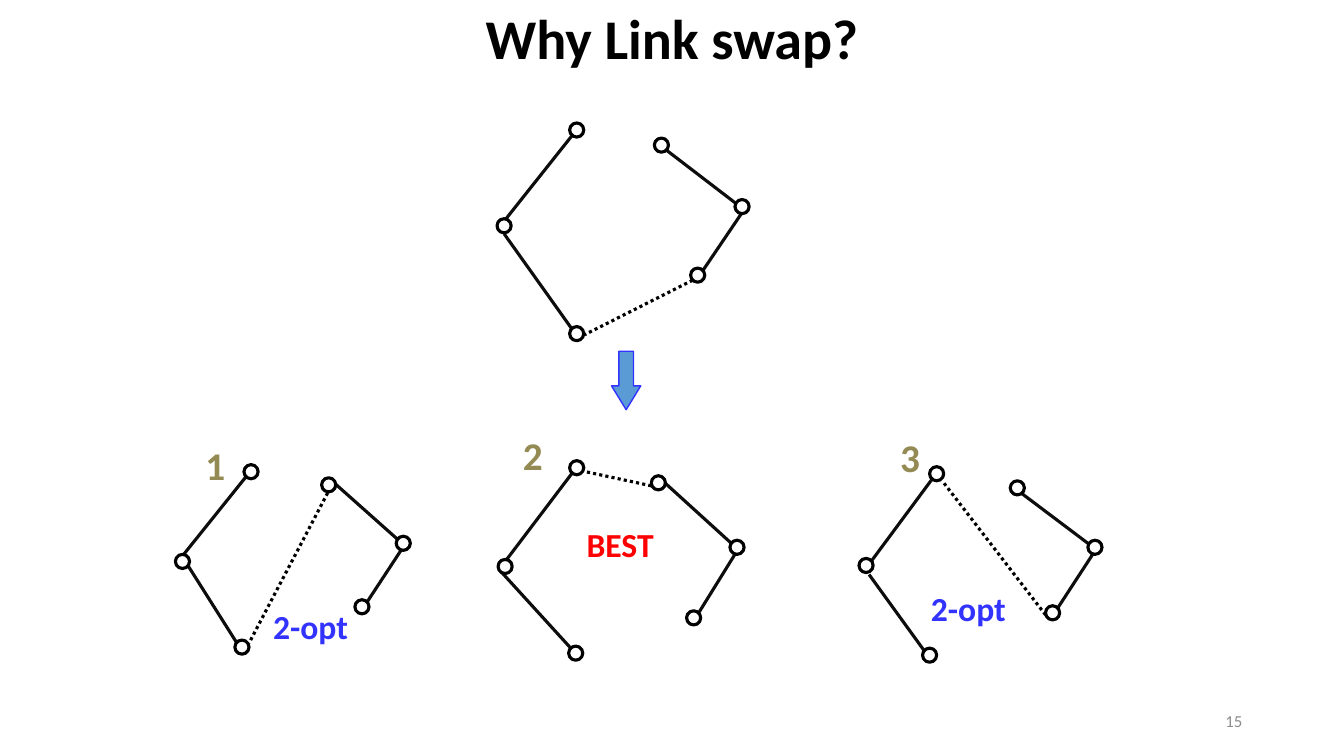
from lxml import etree
from pptx import Presentation
from pptx import util as u
from pptx.dml.color import RGBColor
from pptx.enum import dml, shapes, text
from pptx.oxml.ns import qn

PX = 9144  # EMU in one px, 100 px to the inch
NODE = 14
FONT = "Calibri"
OLIVE, BLUE, RED = "948A54", "3333FF", "FF0000"
BLACK, INK, WHITE = "000000", "0D0D0D", "FFFFFF"

# Each tour: nodes (left, top), solid links and one dotted link (x1, y1, x2, y2),
# labels (words, box, size, colour, line spacing in points)
TOURS = [
    dict(
        nodes=[(242, 461), (174, 550), (233, 635), (319, 474), (393, 532), (352, 595)],
        links=[(244, 473, 175, 559), (235, 638, 187, 562),
               (401, 541, 328, 476), (401, 541, 359, 605)],
        dots=(325, 489, 247, 638),
        labels=[("1", (190, 433, 47, 62), 28, OLIVE, None),
                ("2-opt", (233, 596, 150, 62), 24, BLUE, None)]),
    dict(
        nodes=[(922, 463), (852, 554), (915, 643), (1002, 477), (1079, 536), (1037, 601)],
        links=[(924, 476, 864, 557), (917, 646, 862, 570),
               (1087, 545, 1014, 490), (1087, 545, 1044, 611)],
        dots=(1037, 610, 936, 479),
        labels=[("3", (868, 437, 69, 55), 28, OLIVE, 25.2),
                ("2-opt", (889, 578, 143, 62), 24, BLUE, None)]),
    dict(
        nodes=[(565, 457), (494, 555), (564, 641), (646, 472), (724, 536), (681, 606)],
        links=[(567, 470, 495, 565), (567, 644, 495, 565),
               (732, 545, 655, 475), (732, 545, 688, 616)],
        dots=(646, 482, 581, 468),
        labels=[("BEST", (516, 515, 198, 76), 24, RED, None),
                ("2", (494, 435, 69, 55), 28, OLIVE, 25.2)]),
    dict(
        nodes=[(565, 122), (493, 217), (565, 324), (649, 137), (729, 198), (685, 266)],
        links=[(567, 135, 494, 227), (567, 326, 500, 232),
               (738, 208, 661, 149), (738, 208, 692, 276)],
        dots=(687, 278, 580, 332),
        labels=[]),
]


def px(*vals):
    return [u.Emu(v * PX) for v in vals]


def rgb(code):
    return RGBColor.from_string(code)


def style(line, color, width):
    line.color.rgb = rgb(color)
    line.width = u.Pt(width)


def write(frame, words, size, color, bold=True, align=text.PP_ALIGN.CENTER, space=None):
    frame.word_wrap = True
    para = frame.paragraphs[0]
    para.alignment = align
    if space:
        para.line_spacing = space
    run = para.add_run()
    run.text = words
    font = run.font
    font.name, font.size, font.bold = FONT, u.Pt(size), bold
    font.color.rgb = rgb(color)


def label(tree, words, box, size, color, space):
    frame = tree.add_textbox(*px(*box)).text_frame
    write(frame, words, size, color, space=u.Pt(space) if space else None)


def link(tree, ends, color=INK, dash=None):
    wire = tree.add_connector(shapes.MSO_CONNECTOR.STRAIGHT, *px(*ends))
    style(wire.line, color, 2.25)
    if dash:
        wire.line.dash_style = dash
    etree.SubElement(wire._element.spPr, qn("a:effectLst"))


def node(tree, left, top, solid):
    ring = tree.add_shape(shapes.MSO_SHAPE.OVAL, *px(left, top, NODE, NODE))
    ring.shadow.inherit = False
    if solid:
        ring.fill.solid()
        ring.fill.fore_color.rgb = rgb(WHITE)
    else:
        ring.fill.background()
    style(ring.line, BLACK, 2.25)


def tour(slide, nodes, links, dots, labels):
    tree = slide.shapes.add_group_shape().shapes
    for ends in links:
        link(tree, ends)
    link(tree, dots, BLACK, dml.MSO_LINE.ROUND_DOT)
    # The start node stays hollow
    for i, (left, top) in enumerate(nodes):
        node(tree, left, top, i > 0)
    for item in labels:
        label(tree, *item)


def arrow(slide):
    sign = slide.shapes.add_shape(shapes.MSO_SHAPE.RIGHT_ARROW, *px(592, 363, 58, 29))
    sign.rotation = 90
    sign.adjustments[0], sign.adjustments[1] = 0.5, 0.817
    sign.shadow.inherit = False
    sign.fill.solid()
    sign.fill.fore_color.rgb = rgb("5B9BD5")
    style(sign.line, BLUE, 1)


def main():
    deck = Presentation()
    deck.slide_width, deck.slide_height = px(1333, 750)
    slide = deck.slides.add_slide(deck.slide_layouts[5])

    # Title
    title = slide.shapes.title
    title.left, title.top, title.width, title.height = px(0, 0, 1333, 82)
    frame = title.text_frame
    frame.auto_size = text.MSO_AUTO_SIZE.NONE
    frame.vertical_anchor = text.MSO_ANCHOR.MIDDLE
    write(frame, "Why Link swap?", 40, BLACK, space=0.9)

    # Tours and the arrow between them
    for item in TOURS:
        tour(slide, **item)
    arrow(slide)

    # Page number
    frame = slide.shapes.add_textbox(*px(942, 695, 300, 40)).text_frame
    frame.vertical_anchor = text.MSO_ANCHOR.MIDDLE
    write(frame, "15", 12, "8C8C8C", bold=False, align=text.PP_ALIGN.RIGHT)

    deck.save("out.pptx")


if __name__ == "__main__":
    main()
